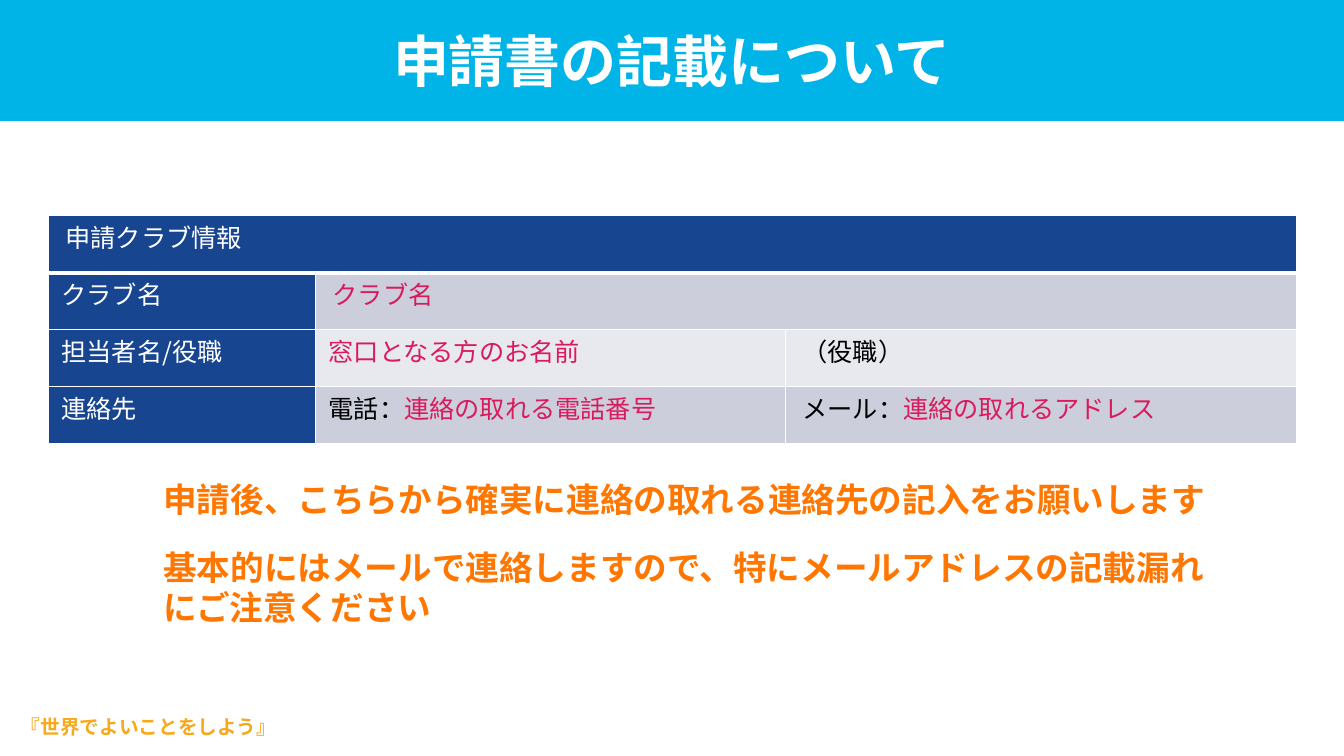
from lxml import etree
from pptx import Presentation
from pptx import util as u
from pptx.dml.color import RGBColor
from pptx.enum import shapes, text
from pptx.oxml import ns

FONT = "Noto Sans CJK JP"
SKY = RGBColor(0x01, 0xB4, 0xE7)
NAVY = RGBColor(0x17, 0x45, 0x8F)
PINK = RGBColor(0xD9, 0x1A, 0x5C)
ORANGE = RGBColor(0xFF, 0x76, 0x00)
GOLD = RGBColor(0xF7, 0xA8, 0x1B)
GRAY = RGBColor(0xCC, 0xCF, 0xDB)
PALE = RGBColor(0xE8, 0xE9, 0xEE)
WHITE = RGBColor(0xFF, 0xFF, 0xFF)
BLACK = RGBColor(0x00, 0x00, 0x00)

WIDTH, HEIGHT = u.Inches(13.33), u.Inches(7.5)
COLUMNS = (2.65, 4.66, 5.07)
ROW_HEIGHT = 0.565
# Each row lists its cells; each cell lists its (text, colour) spans.
ROWS = (
    ([("申請クラブ情報", WHITE)],),
    ([("クラブ名", WHITE)], [("クラブ名", PINK)]),
    ([("担当者名/役職", WHITE)], [("窓口となる方のお名前", PINK)], [("（役職）", BLACK)]),
    ([("連絡先", WHITE)],
     [("電話：", BLACK), ("連絡の取れる電話番号", PINK)],
     [("メール：", BLACK), ("連絡の取れるアドレス", PINK)]),
)
REQUESTS = (
    "申請後、こちらから確実に連絡の取れる連絡先の記入をお願いします",
    "基本的にはメールで連絡しますので、特にメールアドレスの記載漏れにご注意ください",
)


def add_span(para, words, *, size, color, bold=False):
    span = para.add_run()
    span.text = words
    font = span.font
    font.size, font.bold, font.name = u.Pt(size), bold, FONT
    font.color.rgb = color
    etree.SubElement(font._element, ns.qn("a:ea"), typeface=FONT)


def add_paragraphs(page, box, lines, *, before=0, after=0, spacing=None, **format):
    frame = page.shapes.add_textbox(*box).text_frame
    frame.word_wrap = True
    for index, line in enumerate(lines):
        para = frame.add_paragraph() if index else frame.paragraphs[0]
        para.space_before, para.space_after = u.Pt(before), u.Pt(after)
        para.line_spacing = spacing
        add_span(para, line, **format)


def add_title(page, box, title):
    band = page.shapes.add_shape(shapes.MSO_SHAPE.RECTANGLE, *box)
    band.shadow.inherit = False
    band.fill.solid()
    band.fill.fore_color.rgb = SKY
    band.line.fill.background()
    band.text_frame.vertical_anchor = text.MSO_ANCHOR.MIDDLE
    para = band.text_frame.paragraphs[0]
    para.alignment = text.PP_ALIGN.CENTER
    add_span(para, title, size=40, color=WHITE, bold=True)


def set_borders(cell, bottom):
    """Draw white cell borders; bottom is the lower border's width in points."""
    properties = cell._tc.get_or_add_tcPr()
    for index, (side, width) in enumerate((("L", 1), ("R", 1), ("T", 1), ("B", bottom))):
        line = etree.Element(ns.qn(f"a:ln{side}"), w=str(u.Pt(width)))
        fill = etree.SubElement(line, ns.qn("a:solidFill"))
        etree.SubElement(fill, ns.qn("a:srgbClr"), val=str(WHITE))
        properties.insert(index, line)


def fill_cell(cell, spans, *, roomy, justified):
    cell.vertical_anchor = text.MSO_ANCHOR.MIDDLE
    cell.margin_left = cell.margin_right = u.Inches(0.17 if roomy else 0.13)
    cell.margin_top = cell.margin_bottom = u.Inches(0.08 if roomy else 0)
    para = cell.text_frame.paragraphs[0]
    para.line_spacing = u.Pt(15)
    para.alignment = text.PP_ALIGN.JUSTIFY if justified else text.PP_ALIGN.LEFT
    for words, color in spans:
        add_span(para, words, size=18, color=color)


def add_club_table(page, box):
    table = page.shapes.add_table(len(ROWS), len(COLUMNS), *box).table
    for column, width in zip(table.columns, COLUMNS):
        column.width = u.Inches(width)
    last = len(COLUMNS) - 1
    for r, row in enumerate(ROWS):
        table.rows[r].height = u.Inches(ROW_HEIGHT)
        for c in range(len(COLUMNS)):
            cell = table.cell(r, c)
            cell.fill.solid()
            cell.fill.fore_color.rgb = NAVY if r == 0 or c == 0 else (GRAY if r % 2 else PALE)
            set_borders(cell, bottom=1 if r else 3)
        for c, spans in enumerate(row):
            reaches_edge = c == len(row) - 1
            if reaches_edge and c < last:
                table.cell(r, c).merge(table.cell(r, last))
            fill_cell(table.cell(r, c), spans, roomy=reaches_edge,
                      justified=not (reaches_edge and c == 1))


def main():
    deck = Presentation()
    deck.slide_width, deck.slide_height = WIDTH, HEIGHT
    page = deck.slides.add_slide(deck.slide_layouts[6])
    add_title(page, (0, 0, WIDTH, int(HEIGHT * 0.16)), "申請書の記載について")
    add_paragraphs(page, [u.Inches(n) for n in (1.52, 4.7, 10.65, 1.59)], REQUESTS,
                   before=10, after=10, size=24, color=ORANGE, bold=True)
    add_club_table(page, [u.Inches(n) for n in (
        0.48, 2.14, sum(COLUMNS), ROW_HEIGHT * len(ROWS))])
    add_paragraphs(page, [u.Inches(n) for n in (0.11, 7.07, 2.9, 0.31)],
                   ["『世界でよいことをしよう』"],
                   before=10, spacing=0.9, size=14, color=GOLD, bold=True)
    deck.save("out.pptx")


if __name__ == "__main__":
    main()
